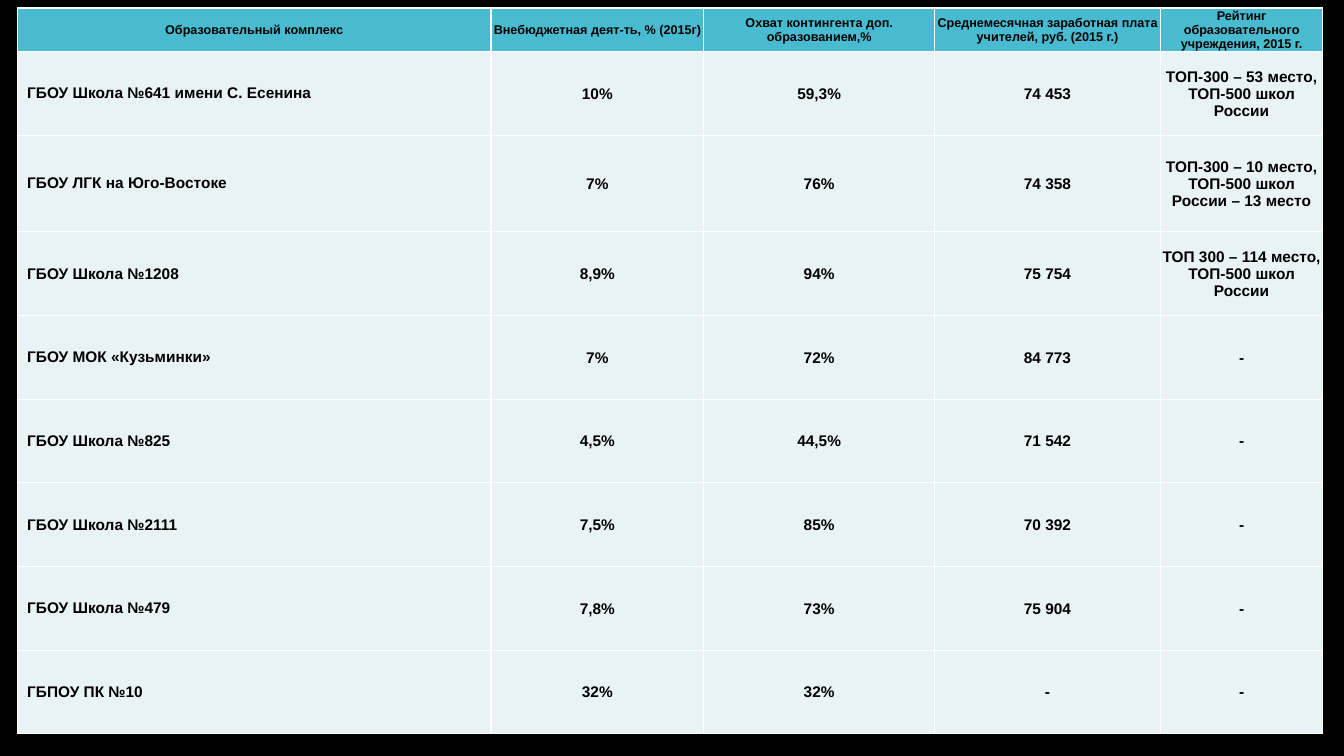
from dataclasses import dataclass, astuple

from lxml import etree
from pptx import Presentation
from pptx import util as u
from pptx.dml.color import RGBColor
from pptx.enum import text
from pptx.oxml import ns

HUES = {"back": "000000", "head": "49BBD1", "body": "E9F2F4",
        "line": "FFFFFF", "text": "000000"}
FONT = "Arial"
WIDTHS = [4.7, 2.11, 2.29, 2.24, 1.61]
HEIGHTS = [0.39, 0.83, 0.96] + [0.83] * 6


@dataclass
class School:
    name: str
    income: str
    cover: str
    wage: str
    rank: str = "-"


HEAD = School("Образовательный комплекс", "Внебюджетная деят-ть, % (2015г)",
              "Охват контингента доп. образованием,%",
              "Среднемесячная заработная плата учителей, руб. (2015 г.)",
              "Рейтинг образовательного учреждения, 2015 г.")
SCHOOLS = [
    School("ГБОУ Школа №641 имени С. Есенина", "10%", "59,3%", "74 453",
           "ТОП-300 – 53 место, ТОП-500 школ России"),
    School("ГБОУ ЛГК на Юго-Востоке", "7%", "76%", "74 358",
           "ТОП-300 – 10 место, ТОП-500 школ России – 13 место"),
    School("ГБОУ Школа №1208", "8,9%", "94%", "75 754",
           "ТОП 300 – 114 место, ТОП-500 школ России"),
    School("ГБОУ МОК «Кузьминки»", "7%", "72%", "84 773"),
    School("ГБОУ Школа №825", "4,5%", "44,5%", "71 542"),
    School("ГБОУ Школа №2111", "7,5%", "85%", "70 392"),
    School("ГБОУ Школа №479", "7,8%", "73%", "75 904"),
    School("ГБПОУ ПК №10", "32%", "32%", "-"),
]


def color(key: str) -> RGBColor:
    return RGBColor.from_string(HUES[key])


def add_edges(cell) -> None:
    # Border lines must come before the fill
    props = cell._tc.get_or_add_tcPr()
    for i, side in enumerate(("lnL", "lnR", "lnT", "lnB")):
        line = etree.Element(ns.qn(f"a:{side}"), w=str(u.Pt(1)))
        fill = etree.SubElement(line, ns.qn("a:solidFill"))
        etree.SubElement(fill, ns.qn("a:srgbClr"), val=HUES["line"])
        props.insert(i, line)


def fill_cell(cell, words: str, is_head: bool, is_name: bool) -> None:
    cell.fill.solid()
    cell.fill.fore_color.rgb = color("head" if is_head else "body")
    cell.vertical_anchor = text.MSO_ANCHOR.MIDDLE
    if not is_name:
        cell.margin_left = cell.margin_right = cell.margin_top = u.Inches(0.01)
        cell.margin_bottom = u.Inches(0)
    para = cell.text_frame.paragraphs[0]
    left = is_name and not is_head
    para.alignment = text.PP_ALIGN.LEFT if left else text.PP_ALIGN.CENTER
    run = para.add_run()
    run.text = words
    run.font.name = FONT
    run.font.size = u.Pt(9 if is_head else 11)
    run.font.bold = True
    run.font.color.rgb = color("text")
    add_edges(cell)


def main() -> None:
    deck = Presentation()
    deck.slide_width, deck.slide_height = u.Inches(13.33), u.Inches(7.5)
    slide = deck.slides.add_slide(deck.slide_layouts[6])
    slide.background.fill.solid()
    slide.background.fill.fore_color.rgb = color("back")

    # Table grid
    rows = [HEAD] + SCHOOLS
    table = slide.shapes.add_table(
        len(rows), len(WIDTHS), u.Inches(0.17), u.Inches(0.08),
        u.Inches(sum(WIDTHS)), u.Inches(sum(HEIGHTS))).table
    for col, width in zip(table.columns, WIDTHS):
        col.width = u.Inches(width)
    for row, height in zip(table.rows, HEIGHTS):
        row.height = u.Inches(height)

    # Header and schools
    for r, school in enumerate(rows):
        for c, words in enumerate(astuple(school)):
            fill_cell(table.cell(r, c), words, r == 0, c == 0)

    deck.save("out.pptx")


if __name__ == "__main__":
    main()
